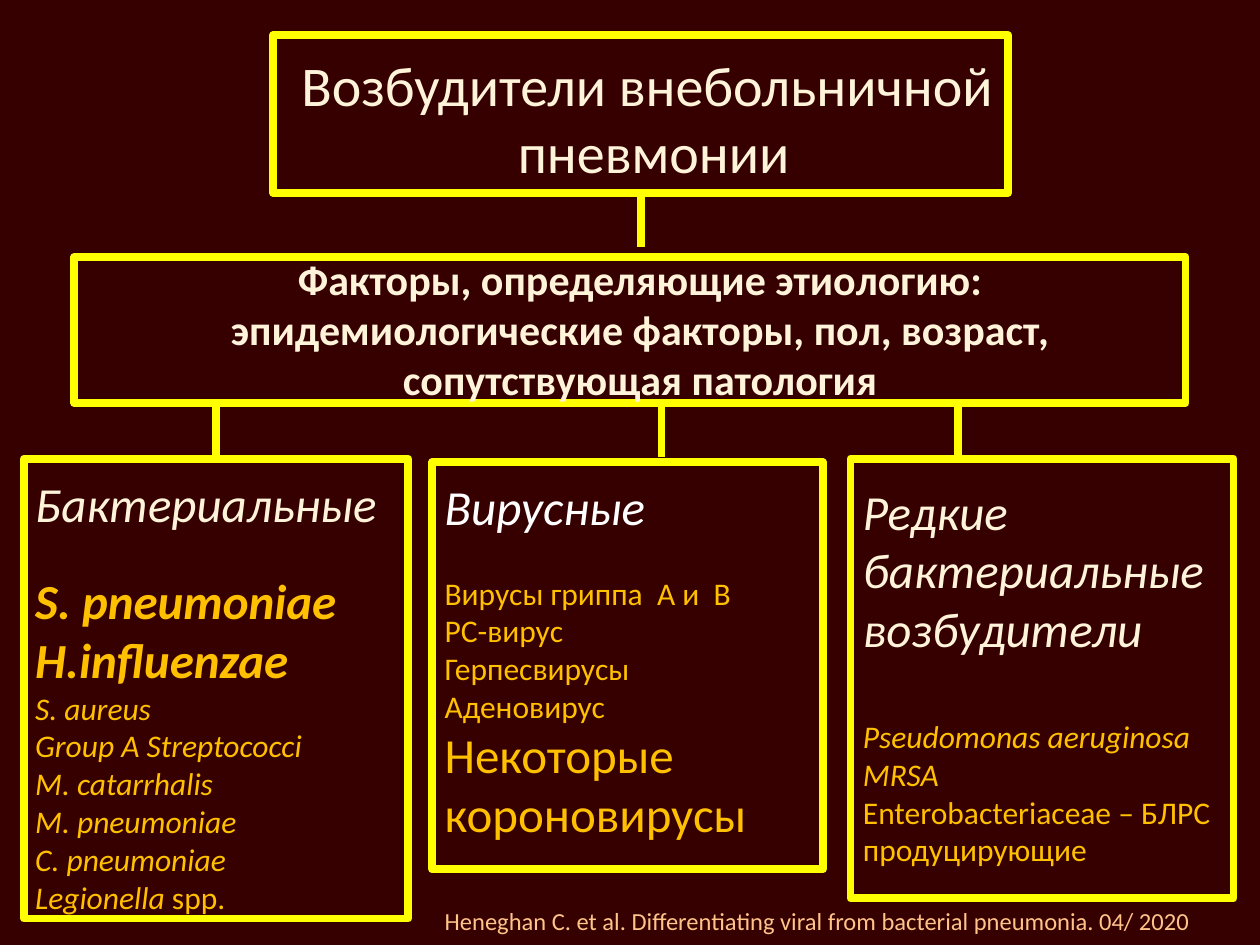
"""Build the slide on the causes of community-acquired pneumonia."""
import lxml.etree
import pptx
import pptx.dml.color
import pptx.enum.shapes
import pptx.enum.text
import pptx.oxml.ns
import pptx.util
from dataclasses import dataclass, field

Pt = pptx.util.Pt
RGB = pptx.dml.color.RGBColor.from_string
ALIGN = pptx.enum.text.PP_ALIGN


@dataclass
class Theme:
    """Colours, type sizes and line weight of the slide."""
    font: str = "Calibri"
    back: str = "360000"
    frame: str = "FFFF00"
    weight: float = 4.5
    cream: str = "FFF4D9"
    white: str = "FFFFFF"
    gold: str = "FFC000"
    peach: str = "FFC489"
    sizes: dict = field(default_factory=lambda: {
        "title": 32, "head": 28, "factors": 24, "item": 18, "source": 14})

    def text(self, size, color, **formats):
        """Return the colour and the font values of one text style."""
        values = {"name": self.font, "size": Pt(self.sizes[size]),
                  "bold": False, "italic": False}
        return color, {**values, **formats}


class Board:
    """Hold the theme and the current slide, and draw elements on it."""

    def __init__(self, s, theme):
        """Take the slide and paint its background."""
        self.s, self.theme = s, theme
        s.background.fill.solid()
        s.background.fill.fore_color.rgb = RGB(theme.back)

    def stroke(self, line):
        """Give a line the frame colour and weight."""
        line.color.rgb = RGB(self.theme.frame)
        line.width = Pt(self.theme.weight)

    def frame(self, *box):
        """Add an unfilled rectangle."""
        sp = self.s.shapes.add_shape(
            pptx.enum.shapes.MSO_SHAPE.RECTANGLE, *map(Pt, box))
        sp.shadow.inherit = False
        sp.fill.background()
        self.stroke(sp.line)
        return sp

    def link(self, x, top, bottom, start=None, end=None):
        """Add a vertical connector, joined to the given frames."""
        sp = self.s.shapes.add_connector(
            pptx.enum.shapes.MSO_CONNECTOR.STRAIGHT,
            Pt(x), Pt(top), Pt(x), Pt(bottom))
        if start is not None:
            sp.begin_connect(start, 2)
            sp.end_x = sp.begin_x
        if end is not None:
            sp.end_connect(end, 0)
            sp.begin_x = sp.end_x
        self.stroke(sp.line)
        lxml.etree.SubElement(sp._element.spPr,
                              pptx.oxml.ns.qn("a:effectLst"))

    def set_text(self, sp, paragraphs, align, wrap=True):
        """Fill a shape with paragraphs of (space before, runs)."""
        tf = sp.text_frame
        formats = {"word_wrap": wrap,
                   "auto_size": pptx.enum.text.MSO_AUTO_SIZE.SHAPE_TO_FIT_TEXT,
                   "vertical_anchor": pptx.enum.text.MSO_ANCHOR.TOP}
        for name, value in formats.items():
            setattr(tf, name, value)
        for i, (space, runs) in enumerate(paragraphs):
            p = tf.add_paragraph() if i else tf.paragraphs[0]
            p.alignment, p.space_before = align, Pt(space)
            for text, (color, values) in runs:
                r = p.add_run()
                r.text = text
                r.font.color.rgb = RGB(color)
                for name, value in values.items():
                    setattr(r.font, name, value)

    def title(self, box, paragraphs):
        """Place and fill the title placeholder."""
        sp = self.s.shapes.title
        for name, value in zip(("left", "top", "width", "height"), box):
            setattr(sp, name, Pt(value))
        self.set_text(sp, paragraphs, ALIGN.CENTER)

    def text(self, box, paragraphs, align=ALIGN.LEFT, wrap=True):
        """Add a text box."""
        sp = self.s.shapes.add_textbox(*map(Pt, box))
        self.set_text(sp, paragraphs, align, wrap)


def lines(style, *texts, space=0):
    """Make one-run paragraphs, with space before the first."""
    return [(0 if i else space, [(text, style)])
            for i, text in enumerate(texts)]


def main():
    """Build and save the presentation."""
    prs = pptx.Presentation()
    prs.slide_width, prs.slide_height = Pt(720), Pt(540)
    theme = Theme()
    board = Board(prs.slides.add_slide(prs.slide_layouts[5]), theme)

    title = theme.text("title", theme.cream)
    factors = theme.text("factors", theme.cream, bold=True)
    head = theme.text("head", theme.cream, italic=True)
    viral_head = theme.text("head", theme.white, italic=True)
    main_species = theme.text("head", theme.gold, bold=True, italic=True)
    species = theme.text("item", theme.gold, italic=True)
    item = theme.text("item", theme.gold)
    big_item = theme.text("head", theme.gold)
    source = theme.text("source", theme.peach)

    title_frame = board.frame(156.2, 20.2, 419.8, 90)
    board.frame(42.5, 146.9, 635, 83.5)
    bacterial_frame = board.frame(13.7, 262.1, 219.6, 262.8)
    board.frame(247, 264.2, 223.2, 232.6)
    board.frame(486, 262.1, 218.9, 251.3)

    board.link(366, 110.2, 141.1, start=title_frame)
    board.link(122.4, 230.4, 262.1, end=bacterial_frame)
    for x in (378, 547.2):
        board.link(x, 230.4, 261.4)

    board.title((156.2, 25.2, 427.7, 85),
                lines(title, "Возбудители внебольничной", " пневмонии"))
    board.text((54, 141.1, 623.5, 94.3), lines(
        factors, "Факторы, определяющие этиологию: эпидемиологические "
        "факторы, пол, возраст, сопутствующая патология"), ALIGN.CENTER)
    board.text(
        (13, 267.1, 211.7, 264),
        lines(head, "Бактериальные")
        + lines(main_species, "S. pneumoniae", "H.influenzae", space=22)
        + lines(species, "S. aureus", "Group A Streptococci",
                "M. catarrhalis", "M. pneumoniae", "C. pneumoniae")
        + [(0, [("Legionella", species), (" spp.", item)])], wrap=False)
    board.text(
        (247, 268.6, 223.2, 218.2),
        lines(viral_head, "Вирусные")
        + lines(item, "Вирусы гриппа  A и  B", "РС-вирус",
                "Герпесвирусы", "Аденовирус", space=22)
        + lines(big_item, "Некоторые короновирусы"))
    board.text(
        (486, 271.4, 217.4, 264.2),
        lines(head, "Редкие бактериальные возбудители")
        + lines(species, "Pseudomonas aeruginosa", "MRSA", space=34)
        + lines(item, "Enterobacteriaceae – БЛРС продуцирующие"))
    board.text((247, 514, 457.2, 24.5), lines(
        source, "Heneghan С. et al. Differentiating viral from "
        "bacterial pneumonia. 04/ 2020"))
    prs.save("out.pptx")


if __name__ == "__main__":
    main()
